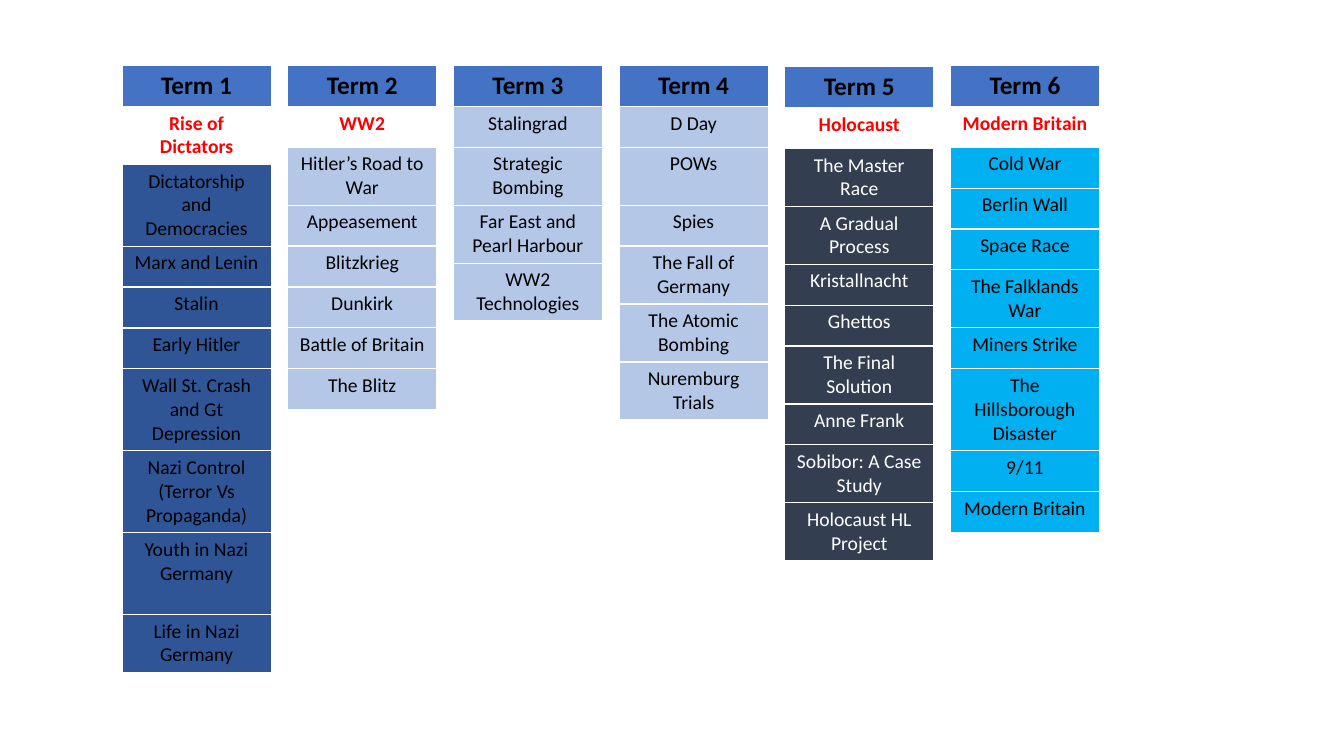
"""Build a one-slide curriculum plan with a column of topics for each term."""
from dataclasses import dataclass

from pptx import Presentation
from pptx.dml.color import RGBColor
from pptx.enum import text as txt
from pptx.util import Pt

FIRST_LEFT, TERM_PITCH, TERM_WIDTH = 87.1, 118.35, 106.6
TERM_TOP = 46.8
HEADER_HEIGHT = 29.2
HEIGHT_BY_LINES = {1: 29.2, 2: 41.4, 3: 58.5}
BLACK, WHITE, RED = "000000", "FFFFFF", "FF0000"
HEADER_BLUE, DICTATOR_BLUE, WAR_BLUE = "4472C4", "2F5597", "B4C7E7"
HOLOCAUST_SLATE, MODERN_CYAN = "333F50", "00B0F0"


@dataclass(frozen=True)
class Topic:
    title: str
    lines: int = 1


@dataclass(frozen=True)
class Term:
    number: int
    theme: Topic | None
    topics: list[Topic]
    fill: str
    ink: str = BLACK
    top: float = TERM_TOP


TERMS = [
    Term(1, Topic("Rise of Dictators", 2), [
        Topic("Dictatorship and Democracies", 3),
        Topic("Marx and Lenin"),
        Topic("Stalin"),
        Topic("Early Hitler"),
        Topic("Wall St. Crash and Gt Depression", 3),
        Topic("Nazi Control (Terror Vs Propaganda)", 3),
        Topic("Youth in Nazi Germany", 3),
        Topic("Life in Nazi Germany", 2),
    ], DICTATOR_BLUE),
    Term(2, Topic("WW2"), [
        Topic("Hitler’s Road to War", 2),
        Topic("Appeasement"),
        Topic("Blitzkrieg"),
        Topic("Dunkirk"),
        Topic("Battle of Britain"),
        Topic("The Blitz"),
    ], WAR_BLUE),
    Term(3, None, [
        Topic("Stalingrad"),
        Topic("Strategic Bombing", 2),
        Topic("Far East and Pearl Harbour", 2),
        Topic("WW2 Technologies", 2),
    ], WAR_BLUE),
    Term(4, None, [
        Topic("D Day"),
        Topic("POWs", 2),
        Topic("Spies"),
        Topic("The Fall of Germany", 2),
        Topic("The Atomic Bombing", 2),
        Topic("Nuremburg Trials", 2),
    ], WAR_BLUE),
    Term(5, Topic("Holocaust"), [
        Topic("The Master Race", 2),
        Topic("A Gradual Process", 2),
        Topic("Kristallnacht"),
        Topic("Ghettos"),
        Topic("The Final Solution", 2),
        Topic("Anne Frank"),
        Topic("Sobibor: A Case Study", 2),
        Topic("Holocaust HL Project", 2),
    ], HOLOCAUST_SLATE, WHITE, top=47.6),
    Term(6, Topic("Modern Britain"), [
        Topic("Cold War"),
        Topic("Berlin Wall"),
        Topic("Space Race"),
        Topic("The Falklands War", 2),
        Topic("Miners Strike"),
        Topic("The Hillsborough Disaster", 3),
        Topic("9/11"),
        Topic("Modern Britain"),
    ], MODERN_CYAN),
]


def paint(color_format, color: str) -> None:
    """Set a colour from its hex string."""
    color_format.rgb = RGBColor.from_string(color)


def write(cell, content: str, *, fill: str, ink: str = BLACK,
          size: float = 14, bold: bool = False) -> None:
    """Fill a cell and write centred text in it."""
    cell.fill.solid()
    paint(cell.fill.fore_color, fill)
    paragraph = cell.text_frame.paragraphs[0]
    paragraph.alignment = txt.PP_ALIGN.CENTER
    run = paragraph.add_run()
    run.text = content
    run.font.name = "Calibri"
    run.font.size = Pt(size)
    run.font.bold = bold
    paint(run.font.color, ink)


def draw_term(slide, term: Term) -> None:
    """Draw one term as a single-column table."""
    entries = ([term.theme] if term.theme else []) + term.topics
    heights = [HEADER_HEIGHT] + [HEIGHT_BY_LINES[entry.lines] for entry in entries]
    left = FIRST_LEFT + (term.number - 1) * TERM_PITCH
    plan = slide.shapes.add_table(
        len(heights), 1, Pt(left), Pt(term.top), Pt(TERM_WIDTH), Pt(sum(heights))
    ).table
    plan.horz_banding = False
    for row, height in zip(plan.rows, heights):
        row.height = Pt(height)
    write(plan.cell(0, 0), f"Term {term.number}", fill=HEADER_BLUE, size=18, bold=True)
    for index, entry in enumerate(entries, start=1):
        if entry is term.theme:
            write(plan.cell(index, 0), entry.title, fill=WHITE, ink=RED, bold=True)
        else:
            write(plan.cell(index, 0), entry.title, fill=term.fill, ink=term.ink)


def main() -> None:
    """Create the slide and save the presentation."""
    deck = Presentation()
    deck.slide_width, deck.slide_height = Pt(960), Pt(540)
    slide = deck.slides.add_slide(deck.slide_layouts[6])
    for term in TERMS:
        draw_term(slide, term)
    deck.save("out.pptx")


if __name__ == "__main__":
    main()
